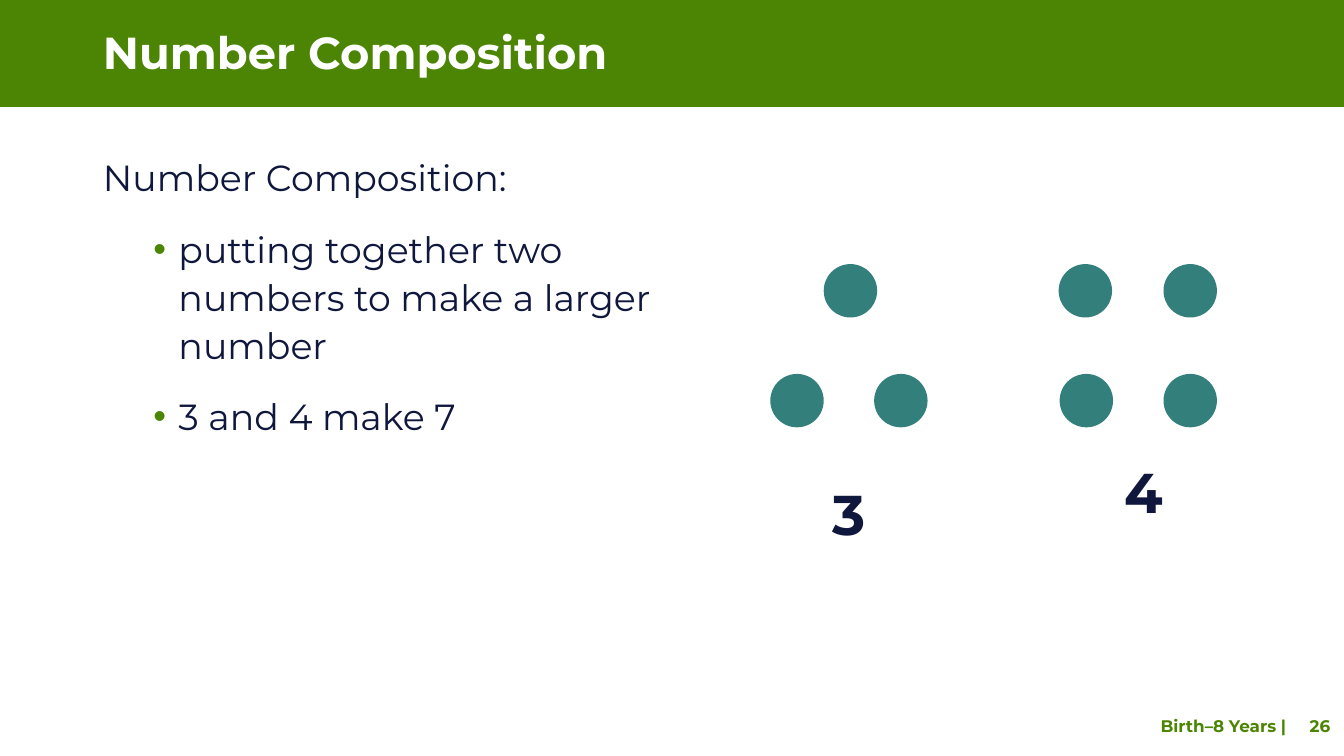
from dataclasses import dataclass

from lxml.etree import SubElement
from pptx import Presentation
from pptx.dml.color import RGBColor
from pptx.enum.shapes import MSO_SHAPE
from pptx.enum.text import MSO_ANCHOR, MSO_AUTO_SIZE, PP_ALIGN
from pptx.oxml.ns import qn
from pptx.util import Inches, Pt

FONT = "Montserrat"
GREEN, TEAL, NAVY, WHITE = "4C8503", "327F7C", "0F173D", "FFFFFF"
DOT_SIZE = 0.53
TOP_ROW, BOTTOM_ROW = 2.62, 3.71


@dataclass
class TextStyle:
    size: float
    color: str
    bold: bool = True
    alignment: PP_ALIGN = PP_ALIGN.LEFT
    line_spacing: float = 1.0


@dataclass
class DotGroup:
    dots: list[tuple[float, float]]


def rgb(color: str) -> RGBColor:
    return RGBColor.from_string(color)


def place(shape, left: float, top: float, width: float, height: float) -> None:
    shape.left, shape.top = Inches(left), Inches(top)
    shape.width, shape.height = Inches(width), Inches(height)


def prepare_frame(text_frame, anchor=MSO_ANCHOR.TOP, auto_size=MSO_AUTO_SIZE.NONE) -> None:
    text_frame.word_wrap = True
    text_frame.auto_size = auto_size
    text_frame.vertical_anchor = anchor


def format_paragraph(paragraph, style: TextStyle, before: float = 0, after: float = 0) -> None:
    paragraph.alignment = style.alignment
    paragraph.line_spacing = style.line_spacing
    paragraph.space_before, paragraph.space_after = Pt(before), Pt(after)
    for run in paragraph.runs:
        run.font.name = FONT
        run.font.size = Pt(style.size)
        run.font.bold = style.bold
        run.font.color.rgb = rgb(style.color)


def set_bullet(paragraph, bulleted: bool) -> None:
    """Give the paragraph a green hanging bullet, or remove the inherited one."""
    properties = paragraph._p.get_or_add_pPr()
    properties.set("marL", str(Inches(0.75 if bulleted else 0)))
    properties.set("indent", str(Inches(-0.25 if bulleted else 0)))
    if bulleted:
        paragraph.level = 1
        SubElement(SubElement(properties, qn("a:buClr")), qn("a:srgbClr"), val=GREEN)
        SubElement(properties, qn("a:buFont"), typeface="Arial")
        SubElement(properties, qn("a:buChar"), char="•")
    else:
        SubElement(properties, qn("a:buNone"))


def add_filled_shape(shapes, kind: MSO_SHAPE, color: str,
                     left: float, top: float, width: float, height: float):
    shape = shapes.add_shape(kind, Inches(left), Inches(top), Inches(width), Inches(height))
    shape.shadow.inherit = False
    shape.fill.solid()
    shape.fill.fore_color.rgb = rgb(color)
    shape.line.fill.background()
    return shape


def add_band(slide) -> None:
    """Draw the title band behind everything else."""
    band = add_filled_shape(slide.shapes, MSO_SHAPE.RECTANGLE, GREEN, 0, 0, 13.33, 1.06)
    slide.shapes._spTree.insert(2, band._element)


def add_dots(slide, group: DotGroup) -> None:
    shapes = slide.shapes.add_group_shape().shapes
    for left, top in group.dots:
        add_filled_shape(shapes, MSO_SHAPE.OVAL, TEAL, left, top, DOT_SIZE, DOT_SIZE)


def fill_title(title) -> None:
    place(title, 0.92, 0.26, 11.82, 0.56)
    prepare_frame(title.text_frame, auto_size=MSO_AUTO_SIZE.SHAPE_TO_FIT_TEXT)
    title.text_frame.text = "Number Composition"
    format_paragraph(title.text_frame.paragraphs[0], TextStyle(32, WHITE, line_spacing=0.9))


def fill_body(body) -> None:
    place(body, 0.92, 1.45, 5.67, 3.01)
    prepare_frame(body.text_frame)
    body.text_frame.text = "\n".join([
        "Number Composition:",
        "putting together two numbers to make a larger number",
        "3 and 4 make 7",
    ])
    style = TextStyle(25.9, NAVY, bold=False, line_spacing=1.1)
    for index, paragraph in enumerate(body.text_frame.paragraphs):
        set_bullet(paragraph, bulleted=index > 0)
        format_paragraph(paragraph, style, before=5 if index else 0, after=12)


def fill_numeral(shape, text: str, left: float, line_spacing: float) -> None:
    place(shape, left, 4.57, 1.56, 1.2)
    prepare_frame(shape.text_frame)
    shape.text_frame.text = text
    paragraph = shape.text_frame.paragraphs[0]
    set_bullet(paragraph, bulleted=False)
    format_paragraph(paragraph, TextStyle(40, NAVY, True, PP_ALIGN.CENTER, line_spacing))


def add_footer(slide) -> None:
    footer = slide.shapes.add_textbox(Inches(9.49), Inches(7), Inches(3.81), Inches(0.4))
    text_frame = footer.text_frame
    prepare_frame(text_frame, MSO_ANCHOR.MIDDLE)
    text_frame.margin_left, text_frame.margin_right = Inches(2.02), 0
    text_frame.text = "Birth–8 Years |\t26"
    paragraph = text_frame.paragraphs[0]
    tabs = SubElement(paragraph._p.get_or_add_pPr(), qn("a:tabLst"))
    SubElement(tabs, qn("a:tab"), pos=str(Inches(1.48)), algn="l")
    format_paragraph(paragraph, TextStyle(12, GREEN))


def main() -> None:
    presentation = Presentation()
    presentation.slide_width, presentation.slide_height = Inches(13.33), Inches(7.5)
    slide = presentation.slides.add_slide(presentation.slide_layouts.get_by_name("Two Content"))
    title, body, three = slide.placeholders

    add_band(slide)
    add_footer(slide)
    fill_title(title)
    fill_body(body)

    add_dots(slide, DotGroup([(8.17, TOP_ROW), (8.67, BOTTOM_ROW), (7.64, BOTTOM_ROW)]))
    fill_numeral(three, "3", 7.64, 1.2)
    add_dots(slide, DotGroup([(10.5, TOP_ROW), (11.54, TOP_ROW),
                              (11.54, BOTTOM_ROW), (10.51, BOTTOM_ROW)]))
    four = slide.shapes.add_textbox(0, 0, 0, 0)
    fill_numeral(four, "4", 10.56, 0.9)

    presentation.save("out.pptx")


if __name__ == "__main__":
    main()
